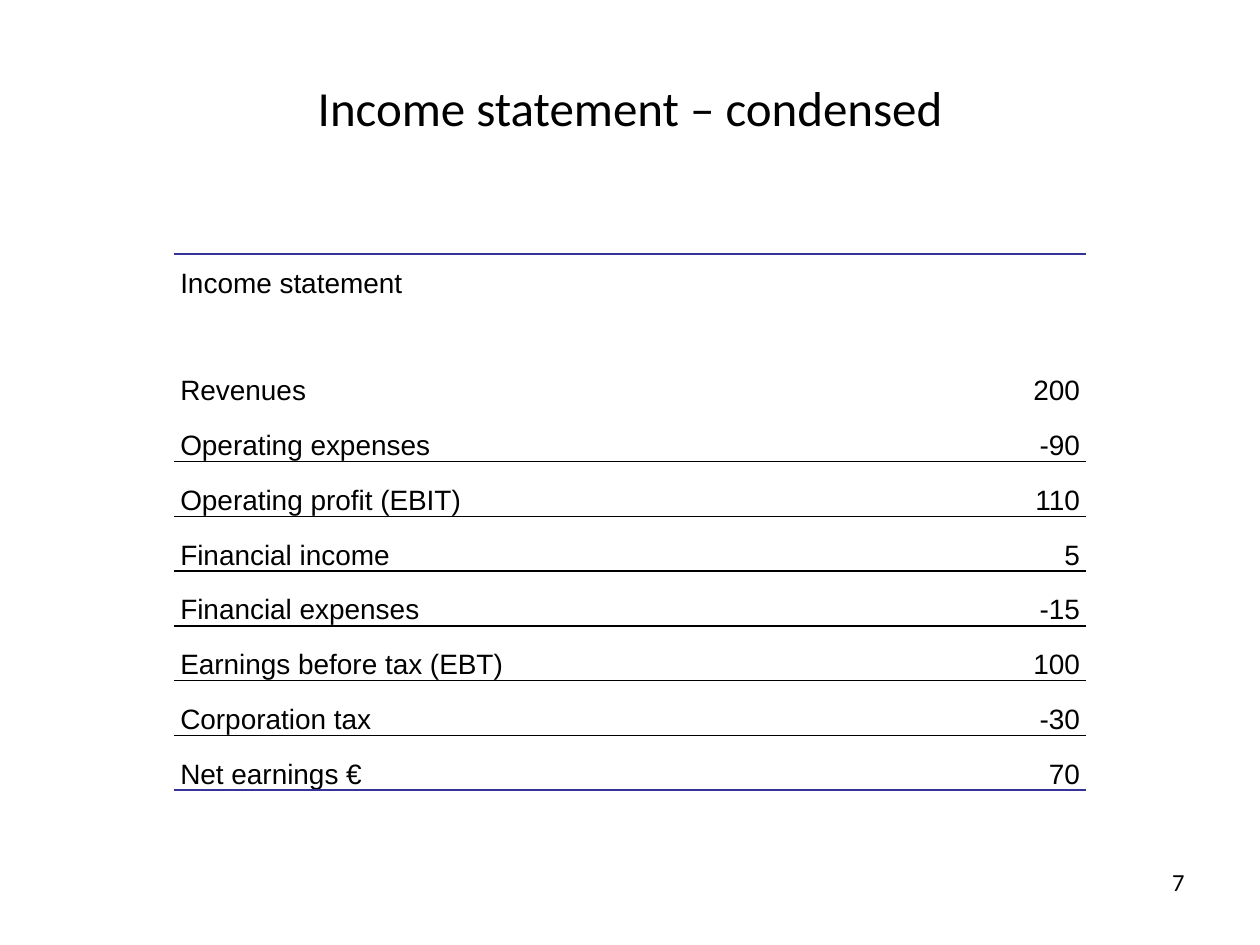
import pptx
import pptx.dml.color
import pptx.enum.text
import pptx.oxml.ns
import pptx.util
from lxml import etree

Pt = pptx.util.Pt
ALIGN = pptx.enum.text.PP_ALIGN
ANCHOR = pptx.enum.text.MSO_ANCHOR
qn = pptx.oxml.ns.qn

BLACK = "000000"
BLUE = "333399"
NO_STYLE = "{2D5ABB26-0587-4C30-8999-92F81FD0307C}"

STATEMENT = [
    ("Income statement", ""),
    ("", ""),
    ("Revenues", "200"),
    ("Operating expenses", "-90"),
    ("Operating profit (EBIT)", "110"),
    ("Financial income", "5"),
    ("Financial expenses", "-15"),
    ("Earnings before tax (EBT)", "100"),
    ("Corporation tax", "-30"),
    ("Net earnings €", "70"),
]
ROW_HEIGHTS = [26, 30] + [31.3] * 8
COLUMN_WIDTHS = [363.6, 157.7]
RULES_BELOW = {3: BLACK, 4: BLACK, 6: BLACK, 7: BLACK, 8: BLACK, 9: BLUE}


def color(value):
    return pptx.dml.color.RGBColor.from_string(value)


def place(shape, left, top, width, height):
    shape.left, shape.top = Pt(left), Pt(top)
    shape.width, shape.height = Pt(width), Pt(height)


def write(text_frame, text, font_name, size, alignment):
    text_frame.text = text
    paragraph = text_frame.paragraphs[0]
    paragraph.alignment = alignment
    font = paragraph.font
    if paragraph.runs:
        font = paragraph.runs[0].font
    font.name = font_name
    font.size = Pt(size)
    font.color.rgb = color(BLACK)


def add_border(cell, side, value):
    properties = cell._tc.get_or_add_tcPr()
    line = etree.SubElement(properties, qn(f"a:ln{side}"), w=str(Pt(1)))
    fill = etree.SubElement(line, qn("a:solidFill"))
    etree.SubElement(fill, qn("a:srgbClr"), val=value)


def format_cell(cell, text, alignment):
    cell.margin_left = cell.margin_right = Pt(3.6)
    cell.margin_top = cell.margin_bottom = Pt(0)
    cell.vertical_anchor = ANCHOR.BOTTOM
    write(cell.text_frame, text, "Arial", 16, alignment)


def add_title(slide, text):
    title = slide.shapes.title
    place(title, 36, 21.6, 648, 78.5)
    title.text_frame.vertical_anchor = ANCHOR.MIDDLE
    write(title.text_frame, text, "Calibri", 28, ALIGN.CENTER)


def add_page_number(slide, text):
    box = slide.shapes.add_textbox(Pt(516.2), Pt(491.8), Pt(167.8), Pt(37.4))
    box.text_frame.word_wrap = True
    write(box.text_frame, text, "Calibri", 14, ALIGN.RIGHT)


def add_statement(slide):
    frame = slide.shapes.add_table(
        len(STATEMENT), len(COLUMN_WIDTHS), Pt(99.4), Pt(145.2),
        Pt(sum(COLUMN_WIDTHS)), Pt(sum(ROW_HEIGHTS)))
    table = frame.table
    table.first_row = table.horz_banding = False
    table._tbl.tblPr.find(qn("a:tableStyleId")).text = NO_STYLE
    for column, width in zip(table.columns, COLUMN_WIDTHS):
        column.width = Pt(width)
    for index, values in enumerate(STATEMENT):
        table.rows[index].height = Pt(ROW_HEIGHTS[index])
        for column, alignment in enumerate((ALIGN.LEFT, ALIGN.RIGHT)):
            cell = table.cell(index, column)
            format_cell(cell, values[column], alignment)
            rule_above = BLUE if index == 0 else RULES_BELOW.get(index - 1)
            if rule_above:
                add_border(cell, "T", rule_above)
            if index in RULES_BELOW:
                add_border(cell, "B", RULES_BELOW[index])
            cell.fill.background()


def main():
    presentation = pptx.Presentation()
    presentation.slide_width = Pt(720)
    presentation.slide_height = Pt(540)
    slide = presentation.slides.add_slide(presentation.slide_layouts[5])
    add_title(slide, "Income statement – condensed")
    add_page_number(slide, "7")
    add_statement(slide)
    presentation.save("out.pptx")


if __name__ == "__main__":
    main()
